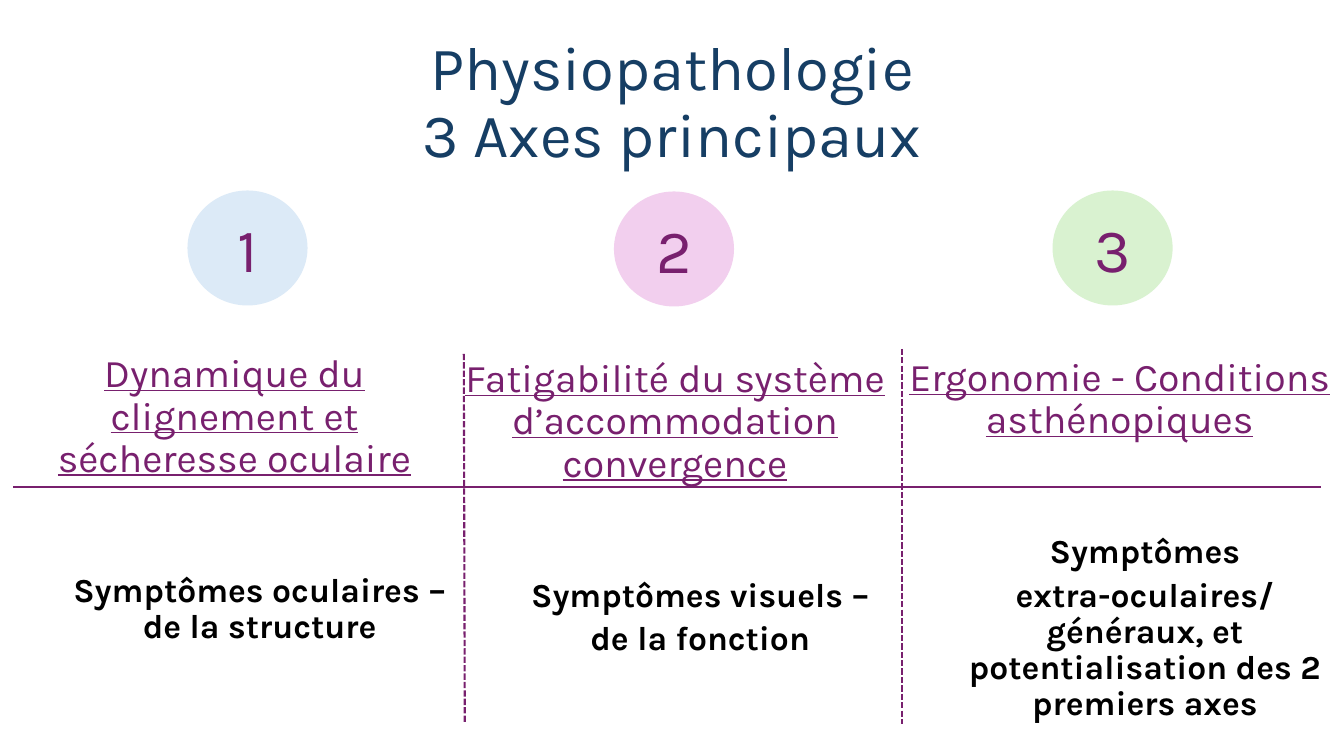
from dataclasses import dataclass

from lxml import etree
from pptx import Presentation
from pptx.dml.color import RGBColor
from pptx.enum import dml, shapes, text
from pptx.oxml.ns import qn
from pptx.util import Inches, Pt


@dataclass(frozen=True)
class Theme:
    font: str = "Karla"
    navy: str = "163E64"
    plum: str = "78206E"
    black: str = "000000"
    title: int = 44
    heading: int = 28
    symptom: int = 24
    line: float = 1.5


T = Theme()
TITLE = "Physiopathologie\v3 Axes principaux"

# Each axis: heading, symptom paragraphs, text box (left, top, width),
# circle (left, top) and circle colour
AXES = [
    ("Dynamique du clignement et sécheresse oculaire",
     ["Symptômes oculaires – de la structure"],
     (0.04, 3.46, 4.57), (1.87, 1.9), "DCEAF7"),
    ("Fatigabilité du système d’accommodation convergence",
     ["Symptômes visuels –", "de la fonction"],
     (4.51, 3.51, 4.37), (6.1, 1.91), "F2CFEE"),
    ("Ergonomie - Conditions asthénopiques",
     ["Symptômes", "extra-oculaires/ généraux, et potentialisation des 2 premiers axes"],
     (8.88, 3.5, 4.45), (10.45, 1.9), "D9F2D0"),
]
COLUMN_BOTTOM = 7.45
CIRCLE = (1.17, 1.12)
HEADING_GAP, PARAGRAPH_GAP = 66, 5

# Rules: from (x, y), to (x, y), dashed
RULES = [
    ((0.13, 4.83), (13.1, 4.83), False),
    ((4.6, 3.51), (4.61, 7.18), True),
    ((8.95, 3.46), (8.95, 7.18), True),
]


def rgb(value):
    return RGBColor.from_string(value)


def place(sp, left, top, width, height):
    sp.left, sp.top = Inches(left), Inches(top)
    sp.width, sp.height = Inches(width), Inches(height)


def style(p, size, color, bold=False, underline=False):
    p.alignment = text.PP_ALIGN.CENTER
    for r in p.runs:
        f = r.font
        f.name, f.size, f.bold, f.underline = T.font, Pt(size), bold, underline
        f.color.rgb = rgb(color)


def set_paragraph(p, gap, indent):
    """Set spacing and left indent, and take off the template's bullet."""
    p.line_spacing, p.space_before, p.space_after = 0.9, Pt(gap), Pt(0)
    pPr = p._p.get_or_add_pPr()
    pPr.set("marL", str(Inches(indent)))
    pPr.set("indent", "0")
    etree.SubElement(pPr, qn("a:buNone"))


def add_title(s):
    sp = s.shapes.title
    place(sp, 0.92, 0.1, 11.5, 1.86)
    tf = sp.text_frame
    tf.auto_size = text.MSO_AUTO_SIZE.NONE
    tf.vertical_anchor = text.MSO_ANCHOR.MIDDLE
    p = tf.paragraphs[0]
    p.text = TITLE
    p.line_spacing = 0.9
    style(p, T.title, T.navy)


def fill_column(sp, heading, symptoms, box):
    left, top, width = box
    place(sp, left, top, width, COLUMN_BOTTOM - top)
    tf = sp.text_frame
    tf.word_wrap = True
    tf.auto_size = text.MSO_AUTO_SIZE.NONE
    tf.vertical_anchor = text.MSO_ANCHOR.TOP
    tf.text = "\n".join([heading, *symptoms])
    first, *rest = tf.paragraphs
    set_paragraph(first, 0, 0)
    style(first, T.heading, T.plum, underline=True)
    for i, p in enumerate(rest):
        p.level = 1
        set_paragraph(p, PARAGRAPH_GAP if i else HEADING_GAP, 0.5)
        style(p, T.symptom, T.black, bold=True)


def add_rule(s, start, end, dashed):
    ln = s.shapes.add_connector(shapes.MSO_CONNECTOR.STRAIGHT,
                                *(Inches(v) for v in (*start, *end)))
    ln.line.color.rgb = rgb(T.plum)
    ln.line.width = Pt(T.line)
    if dashed:
        ln.line.dash_style = dml.MSO_LINE.SQUARE_DOT
    etree.SubElement(ln._element.spPr, qn("a:effectLst"))


def add_circle(s, number, corner, color):
    sp = s.shapes.add_shape(shapes.MSO_SHAPE.OVAL,
                            *(Inches(v) for v in (*corner, *CIRCLE)))
    sp.shadow.inherit = False
    sp.fill.solid()
    sp.fill.fore_color.rgb = rgb(color)
    sp.line.color.rgb = rgb(color)
    sp.line.width = Pt(T.line)
    tf = sp.text_frame
    tf.vertical_anchor = text.MSO_ANCHOR.MIDDLE
    tf.text = str(number)
    style(tf.paragraphs[0], T.title, T.plum)


def main():
    prs = Presentation()
    prs.slide_width, prs.slide_height = Inches(13.33), Inches(7.5)
    s = prs.slides.add_slide(prs.slide_layouts[1])
    add_title(s)
    for number, (heading, symptoms, box, corner, color) in enumerate(AXES, 1):
        sp = s.placeholders[1] if number == 1 else s.shapes.add_textbox(0, 0, 0, 0)
        fill_column(sp, heading, symptoms, box)
        add_circle(s, number, corner, color)
    for rule in RULES:
        add_rule(s, *rule)
    prs.save("out.pptx")


if __name__ == "__main__":
    main()
